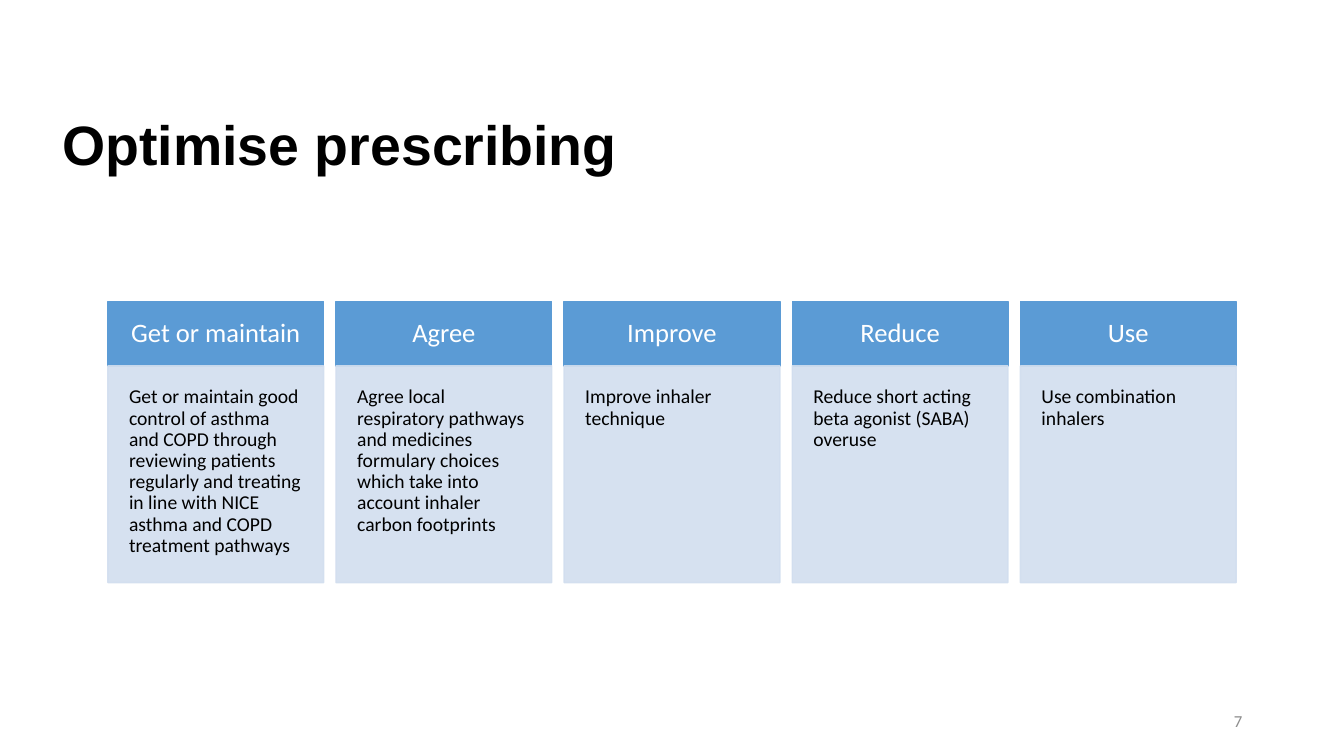
import pptx
import pptx.util
import pptx.dml.color
import pptx.enum.shapes
import pptx.enum.text
import pptx.oxml.ns
import lxml.etree

TITLE = "Optimise prescribing"
ACTIONS = [
    ("Get or maintain", "Get or maintain good control of asthma and COPD through reviewing "
     "patients regularly and treating in line with NICE asthma and COPD treatment pathways"),
    ("Agree", "Agree local respiratory pathways and medicines formulary choices "
     "which take into account inhaler carbon footprints"),
    ("Improve", "Improve inhaler technique"),
    ("Reduce", "Reduce short acting beta agonist (SABA) overuse"),
    ("Use", "Use combination inhalers"),
]
PAGE = "7"

SLIDE_W, SLIDE_H = 13.33, 7.5
GRID_LEFT, GRID_RIGHT, GRID_TOP = 1.07, 12.26, 2.99
COLUMN_W, HEAD_H, BODY_H = 2.14, 0.64, 2.15
STEP = (GRID_RIGHT - GRID_LEFT - COLUMN_W) / (len(ACTIONS) - 1)
BLUE, PALE, WHITE, BLACK, GREY = "5B9BD5", "D2DEEF", "FFFFFF", "000000", "8C8C8C"

inch = pptx.util.Inches
ALIGN = pptx.enum.text.PP_ALIGN
ANCHOR = pptx.enum.text.MSO_ANCHOR


def rgb(color):
    return pptx.dml.color.RGBColor.from_string(color)


def write(s, text, size, color, font="Calibri", bold=False, align=ALIGN.LEFT,
          anchor=ANCHOR.MIDDLE, spacing=0.9, inset=None):
    tf = s.text_frame
    tf.word_wrap = True
    tf.auto_size = pptx.enum.text.MSO_AUTO_SIZE.NONE
    tf.vertical_anchor = anchor
    if inset is not None:
        tf.margin_left = tf.margin_right = tf.margin_top = tf.margin_bottom = inch(inset)
    p = tf.paragraphs[0]
    p.alignment, p.line_spacing = align, spacing
    r = p.add_run()
    r.text = text
    r.font.name, r.font.size, r.font.bold = font, pptx.util.Pt(size), bold
    r.font.color.rgb = rgb(color)


def add_box(slide, left, top, height, color, opacity=100):
    s = slide.shapes.add_shape(pptx.enum.shapes.MSO_SHAPE.RECTANGLE,
                               inch(left), inch(top), inch(COLUMN_W), inch(height))
    s.shadow.inherit = False
    s.line.width = pptx.util.Pt(1)
    for fill in (s.fill, s.line.fill):
        fill.solid()
        fill.fore_color.rgb = rgb(color)
    if opacity < 100:
        for clr in s._element.spPr.iter(pptx.oxml.ns.qn("a:srgbClr")):
            alpha = lxml.etree.SubElement(clr, pptx.oxml.ns.qn("a:alpha"))
            alpha.set("val", str(opacity * 1000))
    return s


def main():
    prs = pptx.Presentation()
    prs.slide_width, prs.slide_height = inch(SLIDE_W), inch(SLIDE_H)
    slide = prs.slides.add_slide(prs.slide_layouts[5])

    title = slide.shapes.title
    title.left, title.top, title.width, title.height = map(inch, (0.52, 1.11, 11.21, 0.7))
    write(title, TITLE, 39.6, BLACK, font="Arial", bold=True)

    for i, (heading, detail) in enumerate(ACTIONS):
        left = GRID_LEFT + i * STEP
        head = add_box(slide, left, GRID_TOP, HEAD_H, BLUE)
        write(head, heading, 19, WHITE, align=ALIGN.CENTER, inset=0.17)
        body = add_box(slide, left, GRID_TOP + HEAD_H, BODY_H, PALE, opacity=90)
        write(body, detail, 14, BLACK, anchor=ANCHOR.TOP, inset=0.21)

    number = slide.shapes.add_textbox(inch(9.42), inch(6.95), inch(3), inch(0.4))
    write(number, PAGE, 12, GREY, align=ALIGN.RIGHT, spacing=1.0)
    prs.save("out.pptx")


if __name__ == "__main__":
    main()
